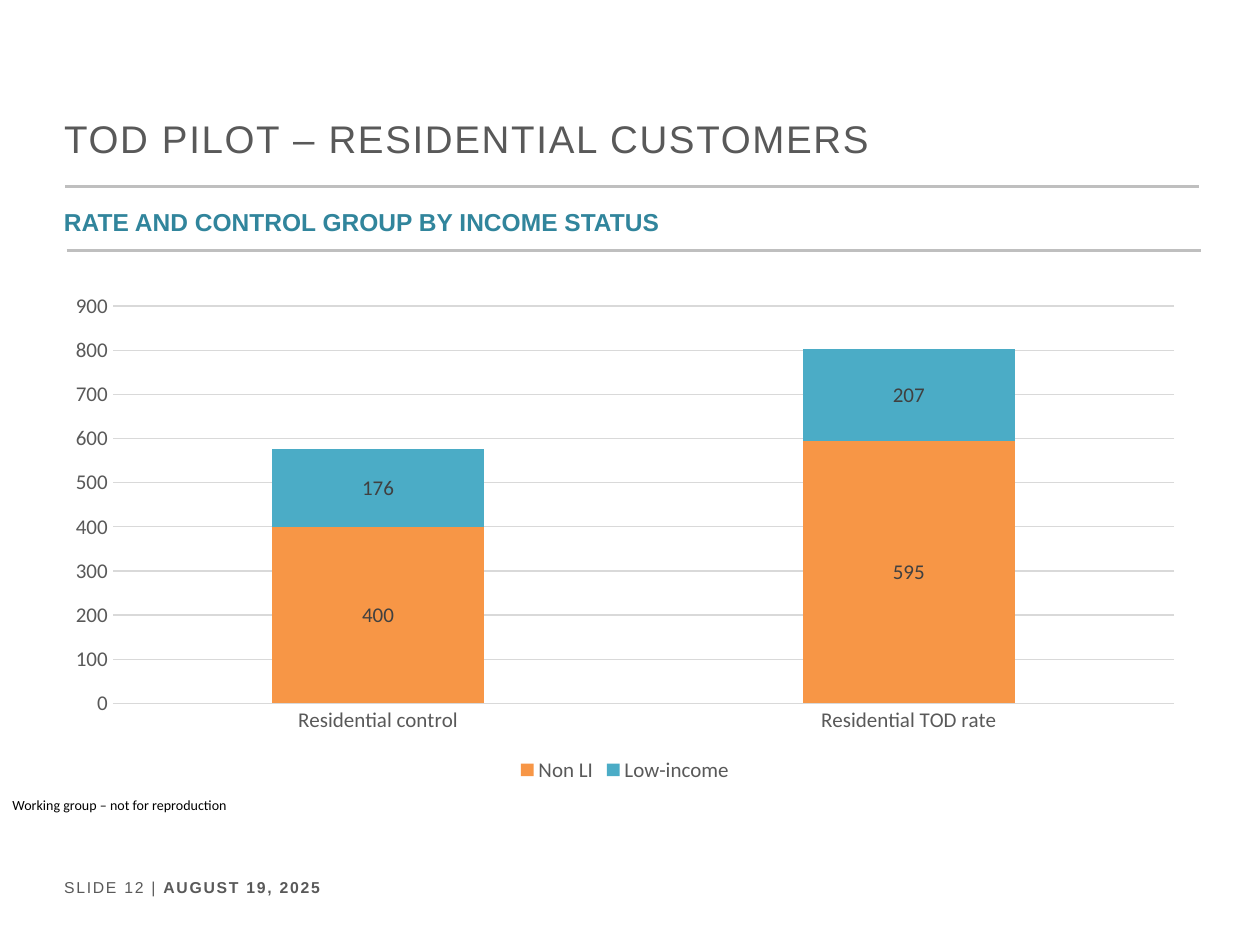
from lxml import etree
from pptx import Presentation
from pptx import util as u
from pptx.chart import data as chart_data
from pptx.dml import color
from pptx.enum import chart as ch, shapes, text
from pptx.oxml import ns

COLORS = {
    "rule": "BFBFBF", "grid": "D9D9D9", "gray": "595959", "label": "404040",
    "heading": "31859C", "black": "000000",
    "Non LI": "F79646", "Low-income": "4BACC6",
}


def rgb(name):
    return color.RGBColor.from_string(COLORS[name])


class SlideBuilder:
    def __init__(self, slide, heading_font="Arial", body_font="Calibri"):
        self.slide = slide
        self.heading_font = heading_font
        self.body_font = body_font

    def style(self, font, size, color_name, name):
        font.size = u.Pt(size)
        font.name = name
        font.color.rgb = rgb(color_name)

    def rule(self, left, top, width):
        line = self.slide.shapes.add_connector(
            shapes.MSO_CONNECTOR.STRAIGHT, u.Inches(left), u.Inches(top),
            u.Inches(left + width), u.Inches(top))
        line.line.color.rgb = rgb("rule")
        line.line.width = u.Pt(1.5)
        etree.SubElement(line._element.spPr, ns.qn("a:effectLst"))

    def text(self, box, runs, size, color_name, font=None, spacing=0,
             line_spacing=None, anchor=text.MSO_ANCHOR.TOP):
        """Add one paragraph; runs are (wording, bold) pairs."""
        shape = self.slide.shapes.add_textbox(*map(u.Inches, box))
        frame = shape.text_frame
        frame.word_wrap = True
        frame.vertical_anchor = anchor
        paragraph = frame.paragraphs[0]
        paragraph.line_spacing = line_spacing
        self.style(paragraph.font, size, color_name, font or self.heading_font)
        for wording, bold in runs:
            run = paragraph.add_run()
            run.text = wording
            run.font.bold = bold
            if spacing:
                run._r.get_or_add_rPr().set("spc", str(spacing * 100))

    def stacked_columns(self, box, categories, series_values):
        data = chart_data.CategoryChartData()
        data.categories = categories
        for name, values in series_values.items():
            data.add_series(name, values)
        chart = self.slide.shapes.add_chart(
            ch.XL_CHART_TYPE.COLUMN_STACKED, *map(u.Inches, box), data).chart
        self.style(chart.font, 10, "black", self.body_font)
        chart.has_title = False

        # Legend
        chart.has_legend = True
        chart.legend.position = ch.XL_LEGEND_POSITION.BOTTOM
        chart.legend.include_in_layout = False
        self.style(chart.legend.font, 12, "gray", self.body_font)

        # Axes
        category_axis, value_axis = chart.category_axis, chart.value_axis
        for axis in (category_axis, value_axis):
            axis.major_tick_mark = axis.minor_tick_mark = ch.XL_TICK_MARK.NONE
            self.style(axis.tick_labels.font, 12, "gray", self.body_font)
        value_axis.has_major_gridlines = True
        value_axis.format.line.fill.background()
        for line in (category_axis.format.line,
                     value_axis.major_gridlines.format.line):
            line.color.rgb = rgb("grid")
            line.width = u.Pt(0.75)
        value_axis.minimum_scale, value_axis.maximum_scale = 0, 900
        value_axis.major_unit = 100

        # Columns and their labels
        plot = chart.plots[0]
        plot.gap_width, plot.overlap = 150, 100
        plot.vary_by_categories = False
        for series in plot.series:
            series.format.fill.solid()
            series.format.fill.fore_color.rgb = rgb(series.name)
            labels = series.data_labels
            labels.show_value = True
            labels.position = ch.XL_LABEL_POSITION.CENTER
            self.style(labels.font, 12, "label", self.body_font)


def main():
    presentation = Presentation()
    presentation.slide_width = u.Inches(10)
    presentation.slide_height = u.Inches(7.5)
    builder = SlideBuilder(
        presentation.slides.add_slide(presentation.slide_layouts[6]))
    middle = text.MSO_ANCHOR.MIDDLE

    # Title and heading with their rules
    builder.rule(0.52, 1.48, 9)
    builder.rule(0.53, 1.99, 9)
    builder.text((0.41, 0.81, 9.11, 0.58),
                 [("TOD PILOT – RESIDENTIAL CUSTOMERS", False)],
                 22, "gray", spacing=1, anchor=middle)
    builder.text((0.41, 1.5, 9.1, 0.47),
                 [("RATE AND CONTROL GROUP BY INCOME STATUS", True)],
                 14, "heading", line_spacing=1.2, anchor=middle)

    # Customer counts
    builder.stacked_columns(
        (0.42, 2.25, 9.08, 4), ["Residential control", "Residential TOD rate"],
        {"Non LI": (400, 595), "Low-income": (176, 207)})

    # Note and footer
    builder.text((0, 6.27, 1.92, 0.24),
                 [("Working group – not for reproduction", False)],
                 8, "black", font=builder.body_font)
    builder.text((0.41, 6.92, 2.68, 0.25),
                 [("SLIDE 12 | ", False), ("AUGUST 19, 2025", True)],
                 9, "gray", spacing=1)

    presentation.save("out.pptx")


if __name__ == "__main__":
    main()
